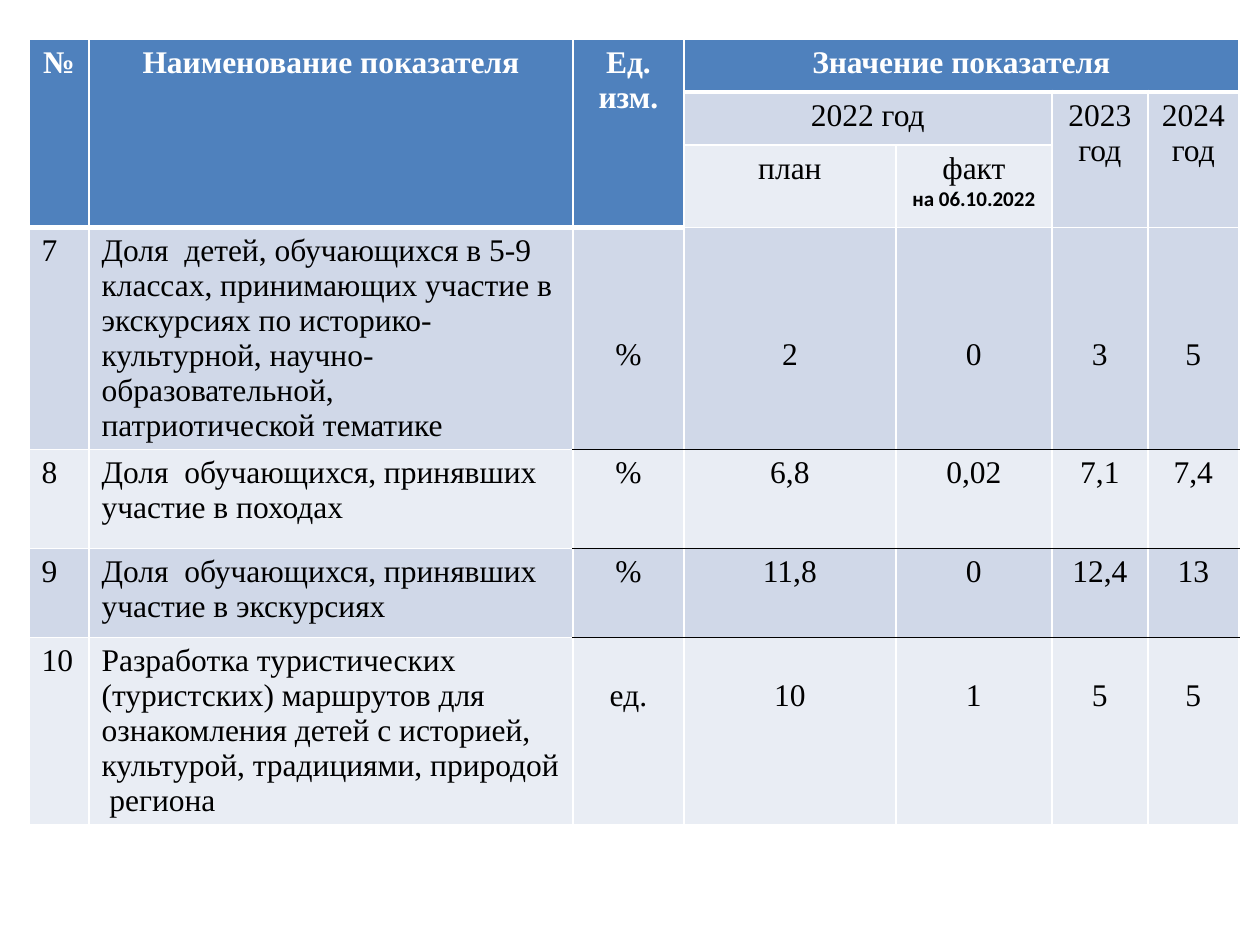
from lxml.etree import SubElement
from pptx import Presentation
from pptx.dml.color import RGBColor
from pptx.enum.text import PP_ALIGN
from pptx.oxml.ns import qn
from pptx.util import Pt

PX = 914400 // 126  # EMU per px
WHITE = RGBColor(0xFF, 0xFF, 0xFF)
BLACK = RGBColor(0x00, 0x00, 0x00)
HEADER_BLUE = RGBColor(0x4F, 0x81, 0xBD)
BAND_DARK = RGBColor(0xD0, 0xD8, 0xE8)
BAND_LIGHT = RGBColor(0xE9, 0xED, 0xF4)

SERIF, SANS = "Times New Roman", "Calibri"
COLUMNS = [60, 484, 111, 212, 156, 96, 91]
ROWS = [53, 53, 81, 222, 99, 89, 187]
HEADER_ROWS = 3
FIRST_VALUE_COLUMN = 2

# Header cells: row, column, row span, column span, text
TOP_HEADERS = [
    (0, 0, 3, 1, "№"),
    (0, 1, 3, 1, "Наименование показателя"),
    (0, 2, 3, 1, "Ед. изм."),
    (0, 3, 1, 4, "Значение показателя"),
]
YEAR_HEADERS = [
    (1, 3, 1, 2, "2022 год"),
    (1, 5, 2, 1, "2023 год"),
    (1, 6, 2, 1, "2024 год"),
    (2, 3, 1, 1, "план"),
    (2, 4, 1, 1, "факт"),
]
# Indicators: top margin of the values in px, then the cells
INDICATORS = [
    (110, ["7", "Доля  детей, обучающихся в 5-9 классах, принимающих участие в "
                "экскурсиях по историко-культурной, научно-образовательной,  "
                "патриотической тематике", "%", "2", "0", "3", "5"]),
    (6, ["8", "Доля  обучающихся, принявших участие в походах",
         "%", "6,8", "0,02", "7,1", "7,4"]),
    (6, ["9", "Доля  обучающихся, принявших участие в экскурсиях",
         "%", "11,8", "0", "12,4", "13"]),
    (41, ["10", "Разработка туристических (туристских) маршрутов для "
                "ознакомления детей с историей, культурой, традициями, "
                "природой  региона", "ед.", "10", "1", "5", "5"]),
]


def add_text(paragraph, text, color=BLACK, bold=False, size=18, font=SERIF,
             align=PP_ALIGN.CENTER):
    paragraph.alignment = align
    run = paragraph.add_run()
    run.text = text
    run.font.name, run.font.size, run.font.bold = font, Pt(size), bold
    run.font.color.rgb = color


def style_cell(cell, fill, top=WHITE, bottom=WHITE, bottom_width=1):
    properties = cell._tc.get_or_add_tcPr()
    borders = [("L", WHITE, 1), ("R", WHITE, 1),
               ("T", top, 1), ("B", bottom, bottom_width)]
    for side, color, width in borders:
        line = SubElement(properties, qn(f"a:ln{side}"), w=str(Pt(width)))
        solid = SubElement(line, qn("a:solidFill"))
        SubElement(solid, qn("a:srgbClr"), val=str(color))
    cell.fill.solid()
    cell.fill.fore_color.rgb = fill


def fill_header(table):
    # Fills and borders, including the cells hidden by merging
    for row in range(HEADER_ROWS):
        for column in range(len(COLUMNS)):
            cell = table.cell(row, column)
            if row == 0 or column <= FIRST_VALUE_COLUMN:
                style_cell(cell, HEADER_BLUE, bottom_width=3)
            else:
                light = row == 2 and column in (3, 4)
                style_cell(cell, BAND_LIGHT if light else BAND_DARK)

    # Captions
    for headers, color, bold in ((TOP_HEADERS, WHITE, True),
                                 (YEAR_HEADERS, BLACK, False)):
        for row, column, height, width, text in headers:
            cell = table.cell(row, column)
            if height * width > 1:
                cell.merge(table.cell(row + height - 1, column + width - 1))
            add_text(cell.text_frame.paragraphs[0], text, color, bold)

    # Date under the actual value
    add_text(table.cell(2, 4).text_frame.add_paragraph(), "на 06.10.2022",
             bold=True, size=12, font=SANS)


def fill_indicators(table):
    last = len(INDICATORS) - 1
    for index, (value_margin, texts) in enumerate(INDICATORS):
        band = BAND_LIGHT if index % 2 else BAND_DARK
        for column, text in enumerate(texts):
            cell = table.cell(HEADER_ROWS + index, column)
            is_value = column >= FIRST_VALUE_COLUMN
            style_cell(cell, band,
                       top=BLACK if is_value and index > 0 else WHITE,
                       bottom=BLACK if is_value and index < last else WHITE)
            if is_value:
                cell.margin_top = value_margin * PX
            add_text(cell.text_frame.paragraphs[0], text,
                     align=PP_ALIGN.CENTER if is_value else PP_ALIGN.LEFT)


def add_indicator_table(slide, left, top):
    table = slide.shapes.add_table(
        len(ROWS), len(COLUMNS), left * PX, top * PX,
        sum(COLUMNS) * PX, sum(ROWS) * PX).table
    table.first_row = table.horz_banding = False
    for column, width in zip(table.columns, COLUMNS):
        column.width = width * PX
    for row, height in zip(table.rows, ROWS):
        row.height = height * PX
    fill_header(table)
    fill_indicators(table)


def main():
    presentation = Presentation()
    presentation.slide_width = 1260 * PX
    presentation.slide_height = 945 * PX
    slide = presentation.slides.add_slide(presentation.slide_layouts[6])
    add_indicator_table(slide, 29, 39)
    presentation.save("out.pptx")


if __name__ == "__main__":
    main()
